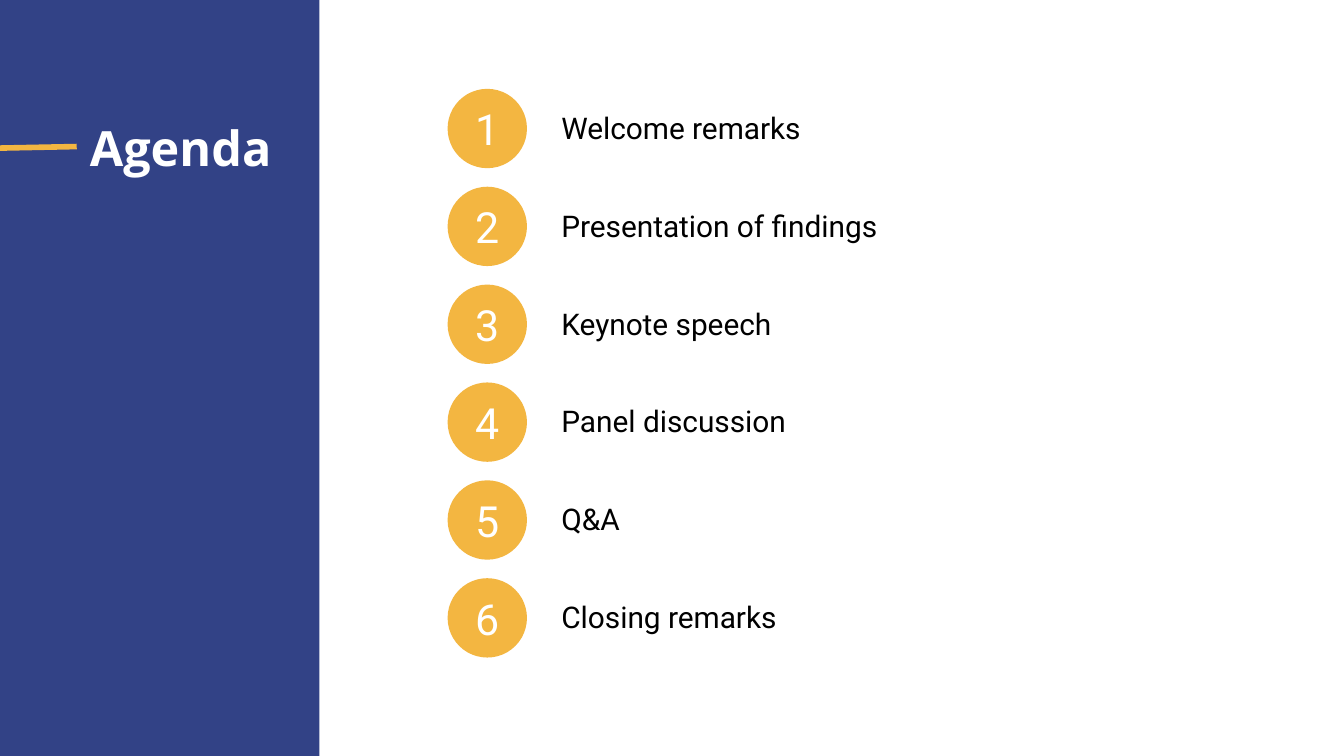
import pptx
import pptx.dml.color
import pptx.enum.shapes
import pptx.enum.text
import pptx.oxml.ns
import pptx.util
from lxml import etree
from pptx.util import Cm

BLUE = pptx.dml.color.RGBColor(0x32, 0x42, 0x86)
AMBER = pptx.dml.color.RGBColor(0xF3, 0xB6, 0x41)
WHITE = pptx.dml.color.RGBColor(0xFF, 0xFF, 0xFF)
BLACK = pptx.dml.color.RGBColor(0x00, 0x00, 0x00)

AGENDA = [
    "Welcome remarks",
    "Presentation of findings",
    "Keynote speech",
    "Panel discussion",
    "Q&A",
    "Closing remarks",
]
FIRST_TOP = Cm(1.68)
ROW_PITCH = Cm(1.85)
CIRCLE_SIZE = Cm(1.5)


def write(box, text, font_name, size, color, bold=False):
    frame = box.text_frame
    frame.word_wrap = True
    frame.margin_left = frame.margin_right = Cm(0.25)
    frame.margin_top = frame.margin_bottom = Cm(0.25)
    paragraph = frame.paragraphs[0]
    paragraph.text = text
    paragraph.font.name = font_name
    paragraph.font.size = pptx.util.Pt(size)
    paragraph.font.color.rgb = color
    paragraph.font.bold = bold


def add_filled(kind, left, top, width, height, color):
    shape = slide.shapes.add_shape(kind, left, top, width, height)
    shape.shadow.inherit = False
    shape.fill.solid()
    shape.fill.fore_color.rgb = color
    shape.line.fill.background()
    return shape


deck = pptx.Presentation()
deck.slide_width = Cm(25.4)
deck.slide_height = Cm(14.29)
slide = deck.slides.add_slide(deck.slide_layouts[6])

# Side panel with the heading
add_filled(pptx.enum.shapes.MSO_SHAPE.RECTANGLE, 0, 0, Cm(6.04), deck.slide_height, BLUE)
heading = slide.shapes.add_textbox(Cm(1.45), Cm(1.98), Cm(4.17), Cm(1.6))
write(heading, "Agenda", "Open Sans", 26, WHITE, bold=True)

# Accent line leading to the heading
accent = slide.shapes.add_connector(
    pptx.enum.shapes.MSO_CONNECTOR.STRAIGHT, 0, Cm(2.8), Cm(1.45), Cm(2.77))
accent.line.color.rgb = AMBER
accent.line.width = pptx.util.Pt(3)
etree.SubElement(accent.element.spPr, pptx.oxml.ns.qn("a:effectLst"))

# Numbered agenda items
for row, topic in enumerate(AGENDA):
    top = FIRST_TOP + row * ROW_PITCH
    number = add_filled(pptx.enum.shapes.MSO_SHAPE.OVAL, Cm(8.46), top,
                        CIRCLE_SIZE, CIRCLE_SIZE, AMBER)
    write(number, str(row + 1), "Roboto", 23, WHITE)
    number.text_frame.vertical_anchor = pptx.enum.text.MSO_ANCHOR.MIDDLE
    number.text_frame.paragraphs[0].alignment = pptx.enum.text.PP_ALIGN.CENTER

    label = slide.shapes.add_textbox(Cm(10.36), top + Cm(0.14), Cm(13.16), Cm(1.19))
    write(label, topic, "Roboto", 16, BLACK)
    label.text_frame.auto_size = pptx.enum.text.MSO_AUTO_SIZE.SHAPE_TO_FIT_TEXT

deck.save("out.pptx")
